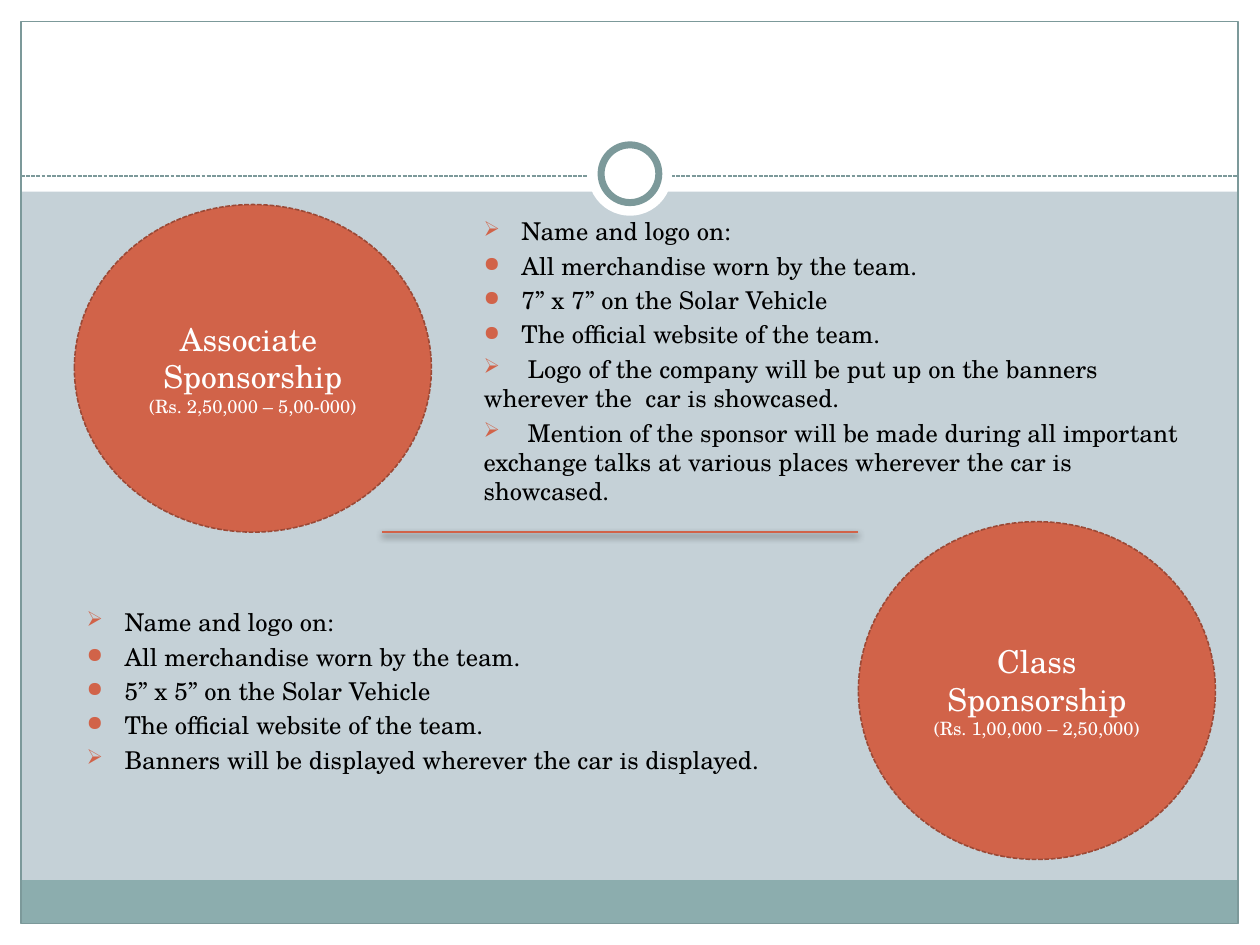
from dataclasses import dataclass

from lxml import etree
from pptx import Presentation
from pptx.dml.color import RGBColor
from pptx.enum import dml, shapes, text
from pptx.oxml import ns
from pptx.util import Pt

FONT = "TeX Gyre Schola"
COLORS = {
    "ground": "C5D1D7", "white": "FFFFFF", "black": "000000", "band": "8CADAE",
    "frame": "7C999A", "accent": "D16349", "edge": "9B4936",
}
HANG = 21.6
WRAP_TAB = 25.2
ARROW, DOT = "➢", "●"


@dataclass(frozen=True)
class Panel:
    left: float
    top: float
    width: float
    height: float
    fill: str | None = None
    line: str | None = None
    weight: float = 0.75
    dashed: bool = False
    kind: shapes.MSO_SHAPE = shapes.MSO_SHAPE.RECTANGLE


@dataclass(frozen=True)
class Benefit:
    wording: str
    bullet: str = ARROW
    hanging: bool = True


@dataclass(frozen=True)
class Tier:
    circle: tuple[float, float, float, float]
    title: tuple[str, ...]
    amount: str
    list_left: float
    list_top: float
    benefits: tuple[Benefit, ...]


def color(name: str) -> RGBColor:
    return RGBColor.from_string(COLORS[name])


def style_line(line, name: str, weight: float, dashed: bool) -> None:
    line.color.rgb = color(name)
    line.width = Pt(weight)
    if dashed:
        line.dash_style = dml.MSO_LINE.SQUARE_DOT


def add_child(parent, tag: str, **attributes: str):
    return etree.SubElement(parent, ns.qn(tag), attributes)


def add_panel(page, panel: Panel):
    shape = page.shapes.add_shape(
        panel.kind, Pt(panel.left), Pt(panel.top), Pt(panel.width), Pt(panel.height))
    shape.shadow.inherit = False
    if panel.fill:
        shape.fill.solid()
        shape.fill.fore_color.rgb = color(panel.fill)
    else:
        shape.fill.background()
    if panel.line:
        style_line(shape.line, panel.line, panel.weight, panel.dashed)
    else:
        shape.line.fill.background()
    return shape


def add_rule(page, left: float, right: float, top: float, name: str, weight: float,
             dashed: bool = False, shadow: bool = False) -> None:
    rule = page.shapes.add_connector(
        shapes.MSO_CONNECTOR.STRAIGHT, Pt(left), Pt(top), Pt(right), Pt(top))
    style_line(rule.line, name, weight, dashed)
    effects = add_child(rule._element.spPr, "a:effectLst")
    if shadow:
        outer = add_child(effects, "a:outerShdw", blurRad=str(Pt(4)), dist=str(Pt(2)),
                          dir="5400000", rotWithShape="0")
        shade = add_child(outer, "a:srgbClr", val=COLORS["black"])
        add_child(shade, "a:alpha", val="45000")


def add_span(para, wording: str, size: float, name: str) -> None:
    span = para.add_run()
    span.text = wording
    span.font.name = FONT
    span.font.size = Pt(size)
    span.font.color.rgb = color(name)


def add_para(frame, index: int):
    return frame.add_paragraph() if index else frame.paragraphs[0]


def add_benefits(page, tier: Tier) -> None:
    box = page.shapes.add_textbox(Pt(tier.list_left), Pt(tier.list_top), Pt(424), Pt(172))
    frame = box.text_frame
    frame.word_wrap = True
    for index, benefit in enumerate(tier.benefits):
        para = add_para(frame, index)
        para.space_before = Pt(2.8)
        props = para._p.get_or_add_pPr()
        hang = Pt(HANG) if benefit.hanging else 0
        props.set("marL", str(hang))
        props.set("indent", str(-hang))
        add_child(add_child(props, "a:buClr"), "a:srgbClr", val=COLORS["accent"])
        add_child(props, "a:buSzPct", val="85000")
        add_child(props, "a:buChar", char=benefit.bullet)
        wording = benefit.wording
        if not benefit.hanging:
            stops = add_child(props, "a:tabLst")
            add_child(stops, "a:tab", pos=str(Pt(WRAP_TAB)), algn="l")
            wording = "\t" + wording
        add_span(para, wording, 14, "black")


def add_circle(page, tier: Tier) -> None:
    circle = add_panel(page, Panel(*tier.circle, "accent", "edge", 0.9, True,
                                   shapes.MSO_SHAPE.OVAL))
    frame = circle.text_frame
    frame.word_wrap = True
    frame.vertical_anchor = text.MSO_ANCHOR.MIDDLE
    lines = [(wording, 18) for wording in tier.title] + [(tier.amount, 10.5)]
    for index, (wording, size) in enumerate(lines):
        para = add_para(frame, index)
        para.alignment = text.PP_ALIGN.CENTER
        add_span(para, wording, size, "white")


def shared_benefits(logo_size: str) -> tuple[Benefit, ...]:
    return (
        Benefit("Name and logo on:"),
        Benefit("All merchandise worn by the team.", DOT),
        Benefit(f"{logo_size} on the Solar Vehicle", DOT),
        Benefit("The official website of the team.", DOT),
    )


OVAL = shapes.MSO_SHAPE.OVAL
PANELS = (
    Panel(0, 527.8, 720, 12.2, "white"),
    Panel(0, 0, 720, 109.5, "white"),
    Panel(0, 0, 12, 540, "white"),
    Panel(708, 0, 12, 540, "white"),
    Panel(11.8, 503, 695.5, 24.5, "band"),
    Panel(12, 12.2, 695.5, 515.5, line="frame"),
)
RINGS = (
    Panel(336, 75.3, 48, 48, "white", kind=OVAL),
    Panel(343.5, 82.8, 33, 33, "white", "frame", 4, kind=OVAL),
)
TIERS = (
    Tier((42.5, 116.9, 204, 187.2), ("Associate ", "Sponsorship"),
         "(Rs. 2,50,000 – 5,00-000)", 269.3, 120.2,
         shared_benefits("7” x 7”") + (
             Benefit("Logo of the company will be put up on the banners "
                     "wherever the  car is showcased.", hanging=False),
             Benefit("Mention of the sponsor will be made during all important exchange "
                     "talks at various places wherever the car is showcased.",
                     hanging=False))),
    Tier((490.5, 298.1, 204, 193), ("Class Sponsorship",),
         "(Rs. 1,00,000 – 2,50,000)", 42.5, 343.5,
         shared_benefits("5” x 5”") + (
             Benefit("Banners will be displayed wherever the car is displayed."),)),
)


def main() -> None:
    """Build the sponsorship tiers slide."""
    deck = Presentation()
    deck.slide_width, deck.slide_height = Pt(720), Pt(540)
    page = deck.slides.add_slide(deck.slide_layouts[6])
    page.background.fill.solid()
    page.background.fill.fore_color.rgb = color("ground")
    for panel in PANELS:
        add_panel(page, panel)
    add_rule(page, 12, 708, 100.6, "frame", 0.75, dashed=True)
    for ring in RINGS:
        add_panel(page, ring)
    for tier in TIERS:
        add_benefits(page, tier)
        add_circle(page, tier)
    add_rule(page, 218.3, 490.5, 304, "accent", 1.57, shadow=True)
    deck.save("out.pptx")


if __name__ == "__main__":
    main()
